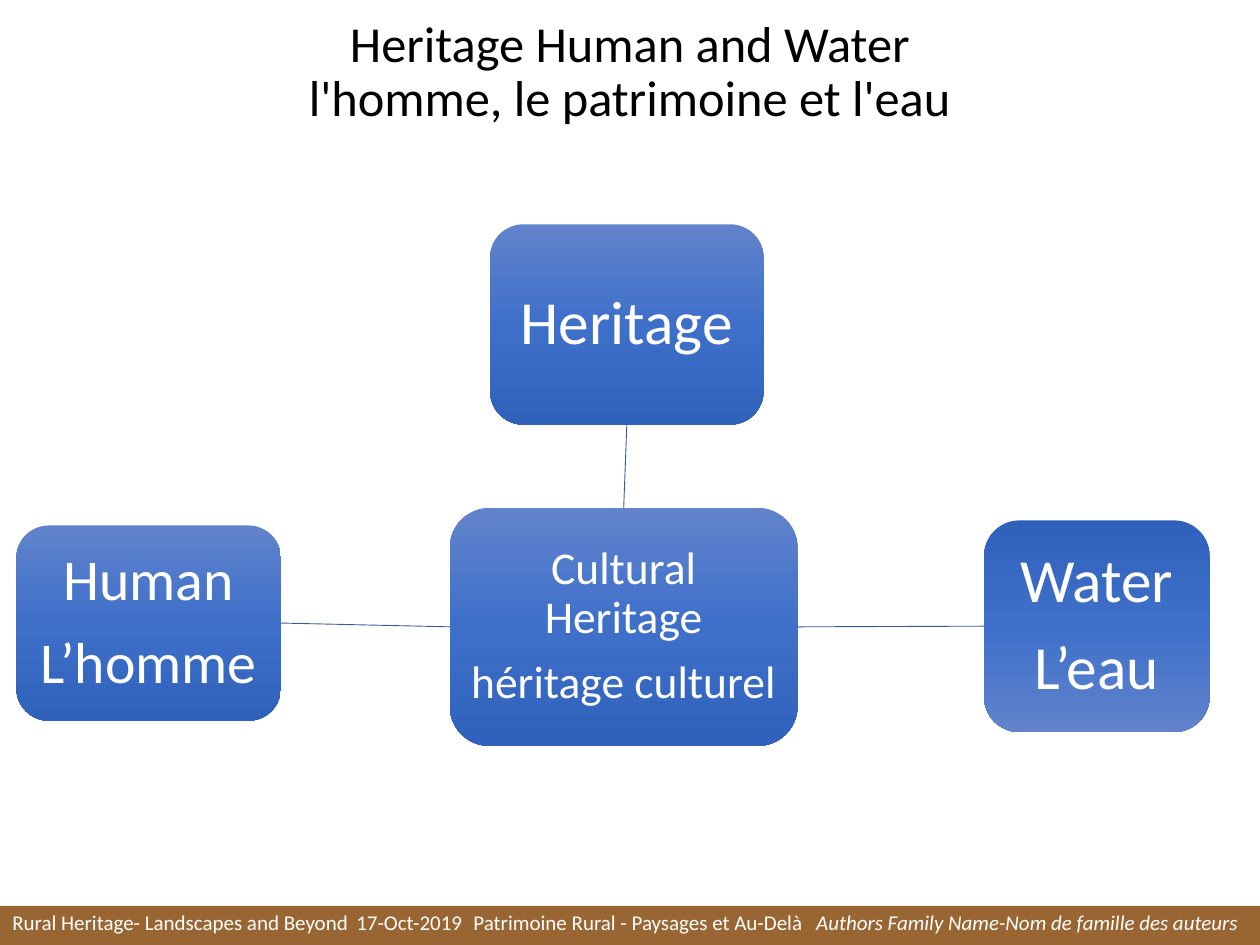
from copy import deepcopy

from lxml import etree
from pptx import Presentation
from pptx.dml.color import RGBColor
from pptx.enum.shapes import MSO_CONNECTOR, MSO_SHAPE
from pptx.enum.text import MSO_ANCHOR, PP_ALIGN
from pptx.oxml.ns import qn
from pptx.util import Inches, Pt

ROUNDED, RECTANGLE = MSO_SHAPE.ROUNDED_RECTANGLE, MSO_SHAPE.RECTANGLE
STRAIGHT = MSO_CONNECTOR.STRAIGHT
TOP, MIDDLE = MSO_ANCHOR.TOP, MSO_ANCHOR.MIDDLE
LEFT, CENTER = PP_ALIGN.LEFT, PP_ALIGN.CENTER
TOP_SIDE, LEFT_SIDE, BOTTOM_SIDE, RIGHT_SIDE = range(4)

# Content
FONT = "Calibri"
WHITE, BLACK, BROWN, LINE_BLUE = "FFFFFF", "000000", "996633", "365B9D"
GRADIENT = ["6183CB", "3E70CA", "3062BB"]
TITLE = "Heritage Human and Water\vl'homme, le patrimoine et l'eau"
FOOTER = [
    ("Rural Heritage- Landscapes and Beyond\t17-Oct-2019\t"
     "Patrimoine Rural - Paysages et Au-Delà\t", False),
    ("Authors Family Name-Nom de famille des auteurs", True),
]
FOOTER_TABS = [2.73, 3.66, 6.38]
# name: (left, top, width, height), lines, text size, inset, gradient from top
BOXES = {
    "culture": ((3.57, 4.03, 2.76, 1.89),
                ["Cultural Heritage", "héritage culturel"], 26, 0.07, GRADIENT),
    "water": ((7.81, 4.13, 1.79, 1.68),
              ["Water", "L’eau"], 35, 0.1, GRADIENT[::-1]),
    "human": ((0.13, 4.17, 2.1, 1.55),
              ["Human", "L’homme"], 33, 0.09, GRADIENT),
    "heritage": ((3.89, 1.78, 2.17, 1.59), ["Heritage"], 35, 0.1, GRADIENT),
}
LINKS = [
    ("culture", RIGHT_SIDE, "water", LEFT_SIDE),
    ("culture", LEFT_SIDE, "human", RIGHT_SIDE),
    ("culture", TOP_SIDE, "heritage", BOTTOM_SIDE),
]


def color(value):
    return RGBColor.from_string(value)


def set_values(target, values):
    for name, value in values.items():
        setattr(target, name, value)


def write(shape, paragraphs, size, ink, anchor, align, insets, after=0):
    """Fill a shape with paragraphs, each a list of (text, italic) runs."""
    frame = shape.text_frame
    sides = ("margin_left", "margin_top", "margin_right", "margin_bottom")
    set_values(frame, dict(zip(sides, map(Inches, insets))))
    set_values(frame, {"word_wrap": True, "vertical_anchor": anchor})
    for index, runs in enumerate(paragraphs):
        paragraph = frame.add_paragraph() if index else frame.paragraphs[0]
        set_values(paragraph, {"alignment": align, "line_spacing": 0.9,
                               "space_before": Pt(0), "space_after": Pt(after)})
        for text, italic in runs:
            for position, part in enumerate(text.split("\v")):
                if position:
                    paragraph.add_line_break()
                run = paragraph.add_run()
                run.text = part
                set_values(run.font, {"name": FONT, "size": Pt(size),
                                      "italic": italic})
                run.font.color.rgb = color(ink)


def fill_gradient(shape, colors):
    """Spread the colours evenly from top to bottom."""
    fill = shape.fill
    fill.gradient()
    fill.gradient_angle = 270
    first = fill.gradient_stops[0]
    stop_list = shape._element.spPr.find(qn("a:gradFill")).find(qn("a:gsLst"))
    stop_list.insert(1, deepcopy(stop_list[0]))
    for index, (stop, value) in enumerate(zip(fill.gradient_stops, colors)):
        stop.position = index / (len(colors) - 1)
        stop.color.rgb = color(value)


def add_box(slide, kind, place):
    shape = slide.shapes.add_shape(kind, *map(Inches, place))
    shape.shadow.inherit = False
    shape.line.fill.background()
    return shape


presentation = Presentation()
presentation.slide_width, presentation.slide_height = Inches(10), Inches(7.5)
slide = presentation.slides.add_slide(presentation.slide_layouts[6])

# Title
title = slide.shapes.add_textbox(*map(Inches, (0, 0.15, 10, 1.31)))
write(title, [[(TITLE, False)]], 28.8, BLACK, TOP, CENTER, (0.1, 0, 0.1, 0))

# Diagram boxes
boxes = {}
for name, (place, lines, size, inset, colors) in BOXES.items():
    box = boxes[name] = add_box(slide, ROUNDED, place)
    fill_gradient(box, colors)
    write(box, [[(line, False)] for line in lines], size, WHITE, MIDDLE,
          CENTER, [inset] * 4, after=round(size * 0.35, 1))

# Links between the boxes
for start, start_side, end, end_side in LINKS:
    link = slide.shapes.add_connector(STRAIGHT, 0, 0, 0, 0)
    link.begin_connect(boxes[start], start_side)
    link.end_connect(boxes[end], end_side)
    link.line.color.rgb = color(LINE_BLUE)
    link.line.width = Pt(0.5)
    etree.SubElement(link._element.spPr, qn("a:effectLst"))

# Footer band
footer = add_box(slide, RECTANGLE, (0, 7.19, 10, 0.31))
footer.fill.solid()
footer.fill.fore_color.rgb = color(BROWN)
write(footer, [FOOTER], 12, WHITE, TOP, LEFT, (0.1, 0.05, 0.1, 0.05))
properties = footer.text_frame.paragraphs[0]._p.get_or_add_pPr()
tab_list = etree.SubElement(properties, qn("a:tabLst"))
for position in FOOTER_TABS:
    etree.SubElement(tab_list, qn("a:tab"), pos=str(Inches(position)), algn="l")

presentation.save("out.pptx")
